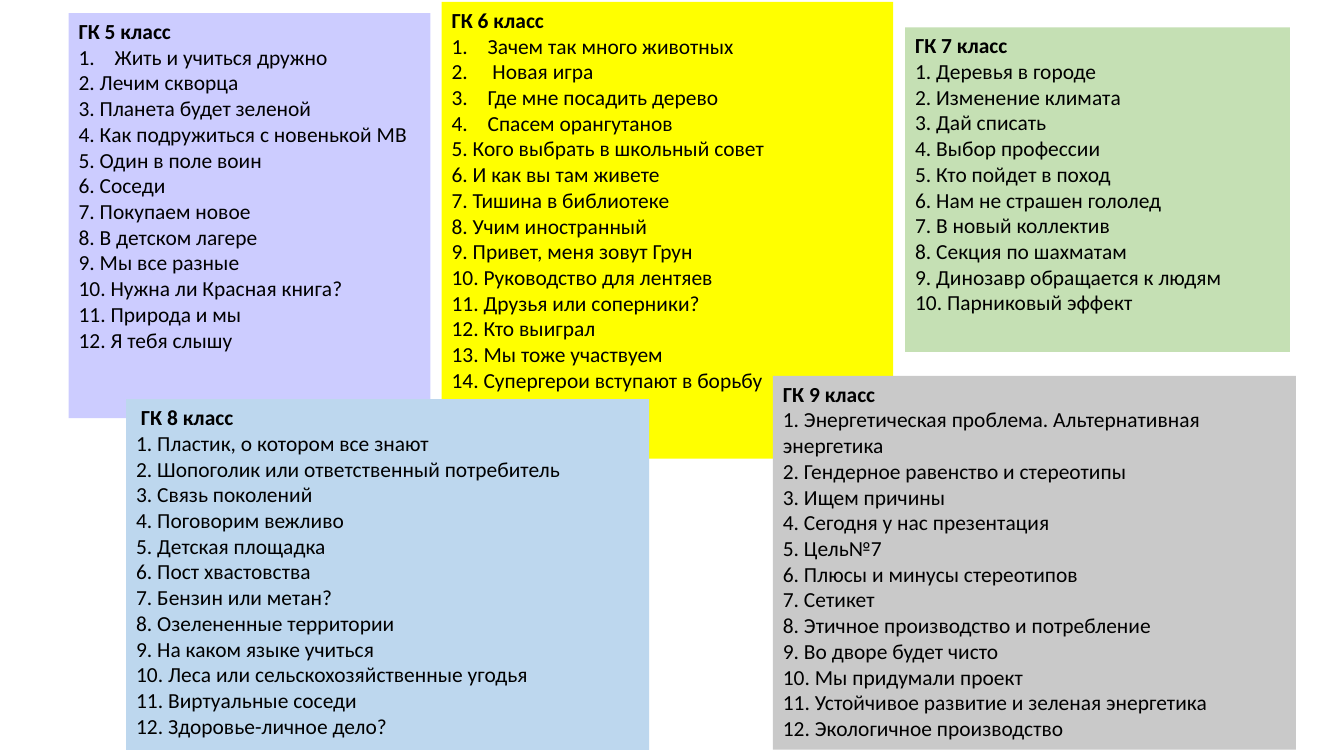
import pptx
import pptx.dml.color
import pptx.enum.shapes
import pptx.enum.text
import pptx.oxml.ns
import pptx.util
from lxml import etree
from pptx.util import Cm

COLOURS = {
    "text": "000000",
    "lilac": "CCCCFF",
    "yellow": "FFFF00",
    "green": "C5E0B4",
    "blue": "BDD7EE",
    "grey": "C9C9C9",
}
FONT = "Calibri"
TEXT_SIZE = 15.3
NUMBER_INDENT = Cm(0.91)

# heading, colour, (left, top, width, height) in cm, count of hanging numbers, topics
PANELS = [
    ("ГК 5 класс", "lilac", (1.73, 0.33, 9.12, 10.21), 1, [
        "Жить и учиться дружно",
        "Лечим скворца",
        "Планета будет зеленой",
        "Как подружиться с новенькой МВ",
        "Один в поле воин",
        "Соседи",
        "Покупаем новое",
        "В детском лагере",
        "Мы все разные",
        "Нужна ли Красная книга?",
        "Природа и мы",
        "Я тебя слышу",
    ]),
    ("ГК 6 класс", "yellow", (11.13, 0.05, 11.38, 11.51), 4, [
        "Зачем так много животных",
        " Новая игра",
        "Где мне посадить дерево",
        "Спасем орангутанов",
        "Кого выбрать в школьный совет",
        "И как вы там живете",
        "Тишина в библиотеке",
        "Учим иностранный",
        "Привет, меня зовут Грун",
        "Руководство для лентяев",
        "Друзья или соперники?",
        "Кто выиграл",
        "Мы тоже участвуем",
        "Супергерои вступают в борьбу",
    ]),
    ("ГК 7 класс", "green", (22.81, 0.69, 9.7, 8.18), 0, [
        "Деревья в городе",
        "Изменение климата",
        "Дай списать",
        "Выбор профессии",
        "Кто пойдет в поход",
        "Нам не страшен гололед",
        "В новый коллектив",
        "Секция по шахматам",
        "Динозавр обращается к людям",
        "Парниковый эффект",
    ]),
    (" ГК 8 класс", "blue", (3.18, 10.06, 13.18, 8.84), 0, [
        "Пластик, о котором все знают",
        "Шопоголик или ответственный потребитель",
        "Связь поколений",
        "Поговорим вежливо",
        "Детская площадка",
        "Пост хвастовства",
        "Бензин или метан?",
        "Озелененные территории",
        "На каком языке учиться",
        "Леса или сельскохозяйственные угодья",
        "Виртуальные соседи",
        "Здоровье-личное дело?",
    ]),
    ("ГК 9 класс", "grey", (19.48, 9.47, 13.18, 9.42), 0, [
        "Энергетическая проблема. Альтернативная энергетика",
        "Гендерное равенство и стереотипы",
        "Ищем причины",
        "Сегодня у нас презентация",
        "Цель№7",
        "Плюсы и минусы стереотипов",
        "Сетикет",
        "Этичное производство и потребление",
        "Во дворе будет чисто",
        "Мы придумали проект",
        "Устойчивое развитие и зеленая энергетика",
        "Экологичное производство",
    ]),
]


def rgb(name):
    return pptx.dml.color.RGBColor.from_string(COLOURS[name])


def number_automatically(para):
    """Give the paragraph a hanging automatic number."""
    properties = para._p.get_or_add_pPr()
    properties.set("marL", str(NUMBER_INDENT))
    properties.set("indent", str(-NUMBER_INDENT))
    etree.SubElement(properties, pptx.oxml.ns.qn("a:buAutoNum"), type="arabicPeriod")


def write_line(para, text, bold=False):
    para.text = text
    para.alignment = pptx.enum.text.PP_ALIGN.LEFT
    for span in para.runs:
        span.font.name = FONT
        span.font.size = pptx.util.Pt(TEXT_SIZE)
        span.font.bold = bold
        span.font.color.rgb = rgb("text")


def add_panel(page, heading, colour, place, hanging_count, topics):
    box = page.shapes.add_shape(
        pptx.enum.shapes.MSO_SHAPE.RECTANGLE, *(Cm(length) for length in place))
    box.shadow.inherit = False
    box.fill.solid()
    box.fill.fore_color.rgb = rgb(colour)
    box.line.fill.background()
    frame = box.text_frame
    frame.word_wrap = True
    frame.vertical_anchor = pptx.enum.text.MSO_ANCHOR.TOP
    write_line(frame.paragraphs[0], heading, bold=True)
    for number, topic in enumerate(topics, 1):
        para = frame.add_paragraph()
        if number <= hanging_count:
            number_automatically(para)
            write_line(para, topic)
        else:
            write_line(para, f"{number}. {topic}")


def main():
    deck = pptx.Presentation()
    deck.slide_width, deck.slide_height = Cm(33.87), Cm(19.05)
    page = deck.slides.add_slide(deck.slide_layouts[6])
    for panel in PANELS:
        add_panel(page, *panel)
    deck.save("out.pptx")


if __name__ == "__main__":
    main()
